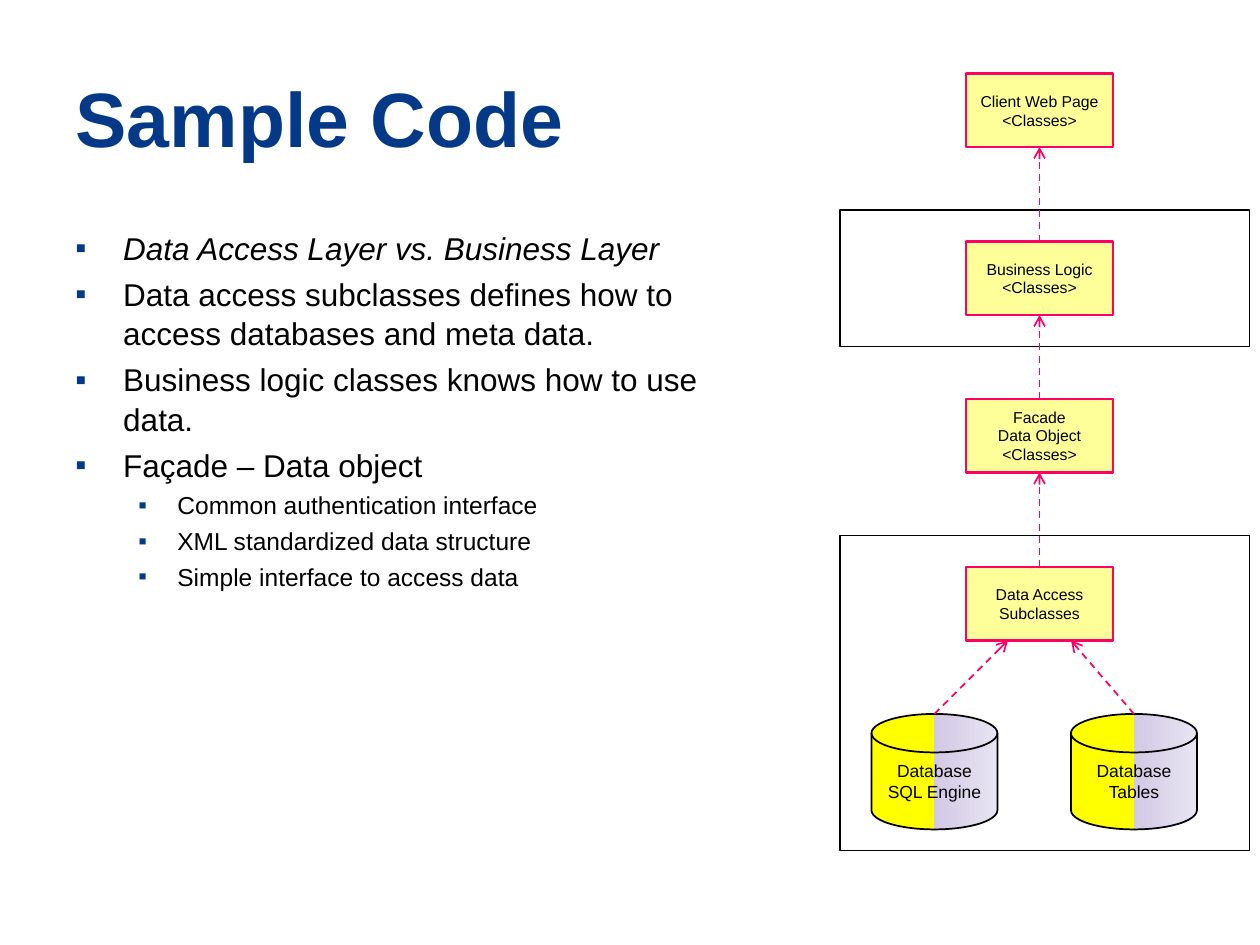
import copy
import pptx
import pptx.dml.color
import pptx.enum.dml
import pptx.enum.shapes
import pptx.enum.text
import pptx.oxml
import pptx.oxml.ns
import pptx.util

SHAPE = pptx.enum.shapes.MSO_SHAPE
ALIGN = pptx.enum.text.PP_ALIGN
MIDDLE = pptx.enum.text.MSO_ANCHOR.MIDDLE
qn = pptx.oxml.ns.qn

NAVY, BLACK, PINK, CREAM = "043988", "000000", "FF0066", "FFFF99"
DISK_STOPS = [(0.5, "FFFF00"), (0.5, "D2C9E5"), (1, "E8E4F2")]

TITLE = "Sample Code"
BULLETS = [  # level, text, italic
    (0, "Data Access Layer vs. Business Layer", True),
    (0, "Data access subclasses defines how to access databases and meta data.", False),
    (0, "Business logic classes knows how to use data.", False),
    (0, "Façade – Data object", False),
    (1, "Common authentication interface", False),
    (1, "XML standardized data structure", False),
    (1, "Simple interface to access data", False),
]
LEVELS = [(18, 0.38, 0.38), (14, 0.81, 0.31)]  # size, indent, hanging

# The diagram sits on a grid of twelve columns and rows to the inch.
BOX_X, BOX_W, BOX_H = 92, 14, 7
BOXES = [  # row, text
    (7, "Client Web Page\n<Classes>"),
    (23, "Business Logic\n<Classes>"),
    (38, "Facade\nData Object <Classes>"),
    (54, "Data Access Subclasses"),
]
FRAME_X, FRAME_W = 80, 39
FRAMES = [(20, 13), (51, 30)]  # row, height
DISK_Y, DISK_W, DISK_H = 68, 12, 11
DISKS = [  # column, text, column where its arrow ends
    (83, "Database\nSQL Engine", 96),
    (102, "Database\nTables", 102),
]


def grid(n):
    return pptx.util.Inches(n / 12)


def rgb(value):
    return pptx.dml.color.RGBColor.from_string(value)


def style(p, size, color=BLACK, bold=False, italic=False):
    for r in p.runs:
        r.font.name, r.font.size = "Arial", pptx.util.Pt(size)
        r.font.bold, r.font.italic = bold, italic
        r.font.color.rgb = rgb(color)


def add_bullet(p, indent, hanging):
    pPr = p._p.get_or_add_pPr()
    pPr.set("marL", str(pptx.util.Inches(indent)))
    pPr.set("indent", str(-pptx.util.Inches(hanging)))
    ns = pptx.oxml.ns.nsdecls("a")
    for xml in (f'<a:buClr {ns}><a:srgbClr val="{NAVY}"/></a:buClr>',
                f'<a:buFont {ns} typeface="Arial"/>',
                f'<a:buChar {ns} char="▪"/>'):
        pPr.append(pptx.oxml.parse_xml(xml))


def add_shape(s, kind, x, y, w, h, line, width, text="", size=9):
    sp = s.shapes.add_shape(kind, grid(x), grid(y), grid(w), grid(h))
    sp.shadow.inherit = False
    sp.fill.background()
    sp.line.color.rgb, sp.line.width = rgb(line), pptx.util.Pt(width)
    if text:
        tf = sp.text_frame
        tf.text, tf.word_wrap, tf.vertical_anchor = text, True, MIDDLE
        for p in tf.paragraphs:
            p.alignment = ALIGN.CENTER
            style(p, size)
    return sp


def fill_disk(sp):
    sp.fill.gradient()
    sp.fill.gradient_angle = 0
    stops = sp._element.spPr.find(".//" + qn("a:gsLst"))
    stops.append(copy.deepcopy(stops[-1]))
    for stop, (position, color) in zip(sp.fill.gradient_stops, DISK_STOPS):
        stop.position = position
        stop.color.rgb = rgb(color)


def add_arrow(s, x1, y1, x2, y2):
    c = s.shapes.add_connector(pptx.enum.shapes.MSO_CONNECTOR.STRAIGHT,
                               grid(x1), grid(y1), grid(x2), grid(y2))
    c.line.color.rgb, c.line.width = rgb(PINK), pptx.util.Pt(1)
    c.line.dash_style = pptx.enum.dml.MSO_LINE.DASH
    ln = c.line._get_or_add_ln()
    ln.append(ln.makeelement(qn("a:tailEnd"), {"type": "arrow"}))
    spPr = c._element.spPr
    spPr.append(spPr.makeelement(qn("a:effectLst"), {}))


def add_texts(s):
    inches = pptx.util.Inches
    title = s.shapes.title
    title.left, title.top = inches(0.5), inches(0.3)
    title.width, title.height = inches(9), inches(1.25)
    tf = title.text_frame
    tf.text, tf.vertical_anchor = TITLE, MIDDLE
    tf.paragraphs[0].alignment = ALIGN.LEFT
    style(tf.paragraphs[0], 44, NAVY, bold=True)

    tf = s.shapes.add_textbox(inches(0.5), inches(1.75), inches(5.5), inches(4.95)).text_frame
    tf.word_wrap = True
    tf.text = "\n".join(text for _, text, _ in BULLETS)
    for p, (level, _, italic) in zip(tf.paragraphs, BULLETS):
        size, indent, hanging = LEVELS[level]
        p.level = level
        p.line_spacing = 1.05
        p.space_before = pptx.util.Pt(size * 0.2)
        add_bullet(p, indent, hanging)
        style(p, size, italic=italic)


def add_diagram(s):
    for y, h in FRAMES:
        add_shape(s, SHAPE.RECTANGLE, FRAME_X, y, FRAME_W, h, BLACK, 1)
    for y, text in BOXES:
        sp = add_shape(s, SHAPE.RECTANGLE, BOX_X, y, BOX_W, BOX_H, PINK, 1.5, text)
        sp.fill.solid()
        sp.fill.fore_color.rgb = rgb(CREAM)
    center = BOX_X + BOX_W / 2
    for (upper, _), (lower, _) in zip(BOXES, BOXES[1:]):
        add_arrow(s, center, lower, center, upper + BOX_H)
    for x, text, end in DISKS:
        fill_disk(add_shape(s, SHAPE.FLOWCHART_MAGNETIC_DISK, x, DISK_Y,
                            DISK_W, DISK_H, BLACK, 1, text, 10))
        add_arrow(s, x + DISK_W / 2, DISK_Y, end, BOXES[-1][0] + BOX_H)


def main():
    prs = pptx.Presentation()
    prs.slide_width, prs.slide_height = grid(120), grid(90)
    s = prs.slides.add_slide(prs.slide_layouts[5])
    add_texts(s)
    add_diagram(s)
    prs.save("out.pptx")


if __name__ == "__main__":
    main()
